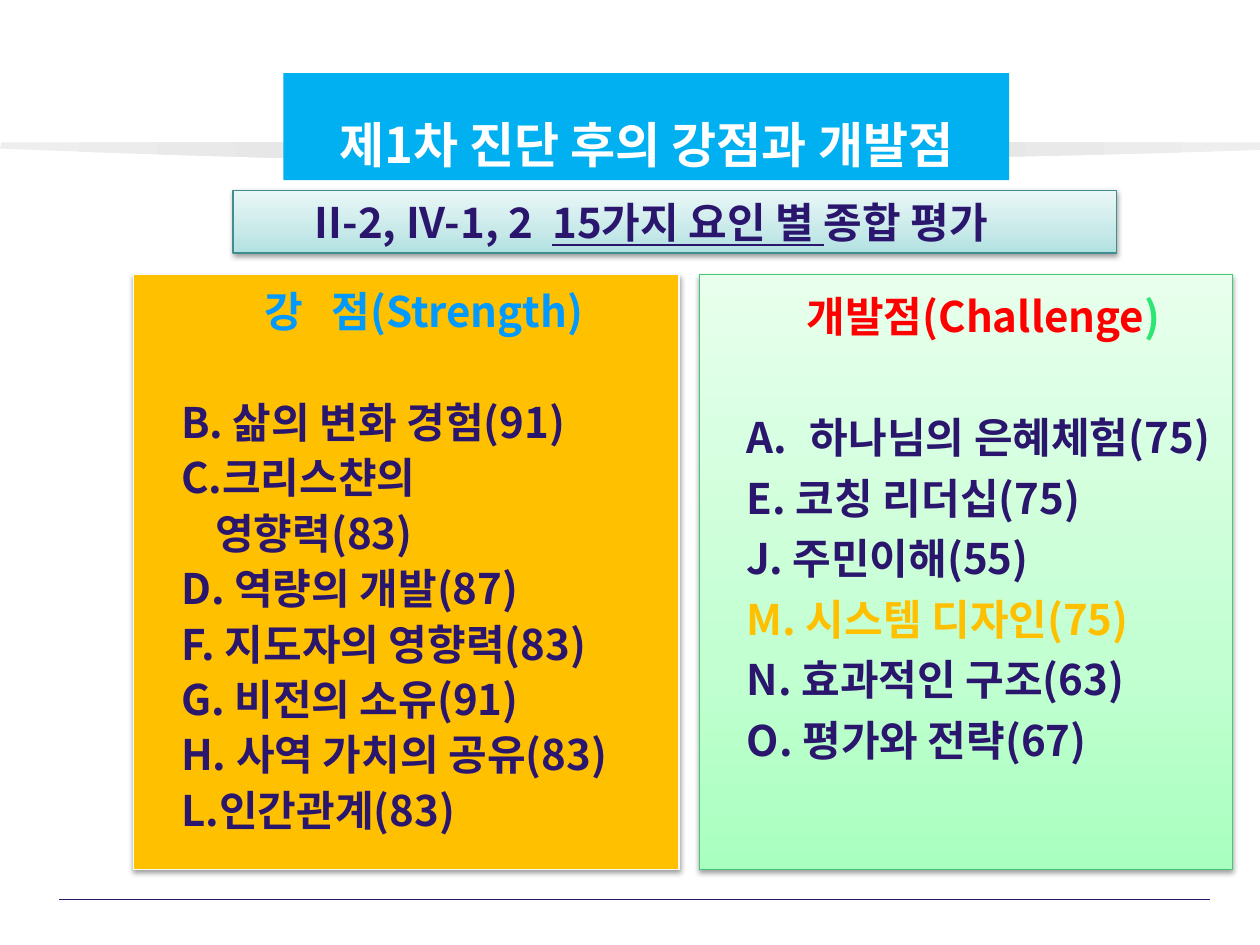
from dataclasses import dataclass
from typing import Optional

from lxml.etree import SubElement
from pptx import Presentation
from pptx.dml.color import RGBColor
from pptx.enum.shapes import MSO_CONNECTOR, MSO_SHAPE
from pptx.enum.text import MSO_ANCHOR, MSO_AUTO_SIZE, PP_ALIGN
from pptx.oxml.ns import qn
from pptx.util import Inches, Pt

FONT = "Noto Sans CJK KR"
NAVY, WHITE, AMBER, GREEN = "2B166E", "FFFFFF", "FFC000", "2DE573"
INDENT = 0.28


@dataclass
class Run:
    text: str
    color: str = NAVY
    size: float = 24
    underline: bool = False
    outline: Optional[tuple[str, float]] = None
    spacing: float = 0


@dataclass
class Para:
    runs: list[Run]
    center: bool = False
    left: float = 0
    hanging: float = 0
    lines: float = 1
    before: float = 0
    numbered: bool = False


@dataclass
class Box:
    left: float
    top: float
    width: float
    height: float
    fill: str | list[tuple[int, str]]
    paras: list[Para]
    line: Optional[str] = None
    grow: bool = False
    wrap: bool = True
    right_inset: float = 0.1


def rgb(value: str) -> RGBColor:
    return RGBColor.from_string(value)


def set_fill(sp, fill: str | list[tuple[int, str]], angle: float = 90) -> None:
    if isinstance(fill, str):
        sp.fill.solid()
        sp.fill.fore_color.rgb = rgb(fill)
        return
    sp.fill.gradient()
    sp.fill.gradient_angle = angle
    stops = sp._element.spPr.find(qn("a:gradFill")).find(qn("a:gsLst"))
    for stop in list(stops):
        stops.remove(stop)
    for position, color in fill:
        stop = SubElement(stops, qn("a:gs"), pos=str(position * 1000))
        SubElement(stop, qn("a:srgbClr"), val=color)


def add_shadow(sp) -> None:
    effects = sp._element.spPr.find(qn("a:effectLst"))
    shadow = SubElement(effects, qn("a:outerShdw"), blurRad=str(Pt(3.1)),
                        dist=str(Pt(1.6)), dir="5400000", rotWithShape="0")
    color = SubElement(shadow, qn("a:srgbClr"), val="000000")
    SubElement(color, qn("a:alpha"), val="38000")


def add_run(p, run: Run) -> None:
    r = p.add_run()
    r.text = run.text
    r.font.size, r.font.bold, r.font.name = Pt(run.size), True, FONT
    r.font.color.rgb = rgb(run.color)
    r.font.underline = run.underline
    props = r.font._element
    SubElement(props, qn("a:ea"), typeface=FONT)
    if run.spacing:
        props.set("spc", str(round(run.spacing * 100)))
    if run.outline:
        color, width = run.outline
        ln = SubElement(props, qn("a:ln"), w=str(Pt(width)))
        SubElement(SubElement(ln, qn("a:solidFill")), qn("a:srgbClr"), val=color)
        props.insert(0, ln)


def add_para(p, para: Para) -> None:
    props = p._p.get_or_add_pPr()
    props.set("marL", str(Inches(para.left)))
    props.set("indent", str(Inches(-para.hanging)))
    if para.numbered:
        SubElement(props, qn("a:buFont"), typeface=FONT)
        SubElement(props, qn("a:buAutoNum"), type="alphaUcPeriod")
    p.alignment = PP_ALIGN.CENTER if para.center else PP_ALIGN.LEFT
    p.line_spacing = para.lines
    p.space_before = Pt(para.before)
    for run in para.runs:
        add_run(p, run)


def add_box(shapes, box: Box) -> None:
    sp = shapes.add_shape(MSO_SHAPE.RECTANGLE, Inches(box.left), Inches(box.top),
                          Inches(box.width), Inches(box.height))
    sp.shadow.inherit = False
    set_fill(sp, box.fill)
    if box.line:
        sp.line.color.rgb = rgb(box.line)
        sp.line.width = Pt(0.75)
        add_shadow(sp)
    else:
        sp.line.fill.background()
    tf = sp.text_frame
    tf.word_wrap = box.wrap
    tf.auto_size = MSO_AUTO_SIZE.SHAPE_TO_FIT_TEXT if box.grow else MSO_AUTO_SIZE.NONE
    tf.vertical_anchor = MSO_ANCHOR.TOP
    tf.margin_right = Inches(box.right_inset)
    for i, para in enumerate(box.paras):
        add_para(tf.add_paragraph() if i else tf.paragraphs[0], para)


def curve(points: list[tuple[float, float]], steps: int = 12) -> list[tuple[float, float]]:
    """Sample a cubic Bezier, leaving out its start point."""
    def at(t: float, axis: int) -> float:
        a, b, c, d = (point[axis] for point in points)
        u = 1 - t
        return u**3 * a + 3 * u * u * t * b + 3 * u * t * t * c + t**3 * d
    return [(at(i / steps, 0), at(i / steps, 1)) for i in range(1, steps + 1)]


def add_backdrop(shapes) -> None:
    knots = [(0, 1.18), (0.53, 1.2), (2.04, 1.26), (3.19, 1.27), (4.34, 1.28),
             (5.76, 1.28), (6.89, 1.26), (8.03, 1.25), (9.49, 1.21), (10.01, 1.19)]
    outline = [knots[0]]
    for i in range(0, len(knots) - 1, 3):
        outline += curve(knots[i:i + 4])
    outline.append((10.01, 1.13))
    builder = shapes.build_freeform(Inches(0.01), Inches(1.13))
    builder.add_line_segments([(Inches(x), Inches(y)) for x, y in outline], close=True)
    band = builder.convert_to_shape()
    band.shadow.inherit = False
    set_fill(band, [(0, "EEEEEE"), (50, "DDDDDD"), (100, "EEEEEE")], angle=0)
    band.line.fill.background()

    rule = shapes.add_connector(MSO_CONNECTOR.STRAIGHT, Inches(0.47), Inches(7.14),
                                Inches(9.6), Inches(7.14))
    rule.line.color.rgb = rgb(NAVY)
    rule.line.width = Pt(0.75)
    SubElement(rule._element.spPr, qn("a:effectLst"))


def column(heading: list[Run], items: list[Para], lines: float, gap: float) -> list[Para]:
    """Centred heading, a gap, then the items, all with one line spacing."""
    items[0].before = gap
    for item in items:
        item.lines = lines
    return [Para(heading, center=True, left=INDENT, lines=lines), *items]


def item(text: str, color: str = NAVY, left: float = INDENT) -> Para:
    return Para([Run(text, color)], left=left)


def main() -> None:
    prs = Presentation()
    prs.slide_width, prs.slide_height = Inches(10), Inches(7.5)
    s = prs.slides.add_slide(prs.slide_layouts[6])
    add_backdrop(s.shapes)

    title = [Para([Run("제1차 진단 후의 강점과 개발점", WHITE, 28)], center=True, lines=1.6)]
    subtitle = [Para([Run("II-2, IV-1, 2"), Run(" ", spacing=5.4),
                      Run("15가지 요인 별 ", underline=True), Run("종합 평가")], center=True)]
    blue, edge = "0099FF", ("1766B5", 1)
    strengths = column(
        [Run("강", blue, outline=edge), Run(" ", blue, spacing=10.8),
         Run("점(Strength)", blue, outline=edge)],
        [item("B. 삶의 변화 경험(91)"), item("C.크리스챤의"),
         item("영향력(83)", left=0.55), item("D. 역량의 개발(87)"),
         item("F. 지도자의 영향력(83)"), item("G. 비전의 소유(91)"),
         item("H. 사역 가치의 공유(83)"), item("L.인간관계(83)")],
        lines=1.1, gap=31.5)
    challenges = column(
        [Run("개발점(Challenge", "FF0000", outline=(GREEN, 1.42)),
         Run(")", GREEN, outline=(GREEN, 1.42))],
        [Para([Run("하나님의 은혜체험(75)")], left=0.78, hanging=0.5, numbered=True),
         item("E. 코칭 리더십(75)"), item("J. 주민이해(55)"),
         item("M. 시스템 디자인(75)", AMBER), item("N. 효과적인 구조(63)"),
         item("O. 평가와 전략(67)")],
        lines=1.2, gap=34.5)

    teal = [(0, "B0E1E1"), (35, "C8E9E9"), (100, "EAF7F7")]
    mint = [(0, "A9FFBF"), (35, "C2FFD1"), (100, "E8FFED")]
    for box in (
        Box(2.25, 0.58, 5.76, 0.85, "00B0F0", title, grow=True, wrap=False),
        Box(1.85, 1.51, 7.01, 0.5, teal, subtitle, "428E8E", grow=True, right_inset=0.47),
        Box(1.06, 2.18, 4.33, 4.72, AMBER, strengths, "F9F9F9"),
        Box(5.55, 2.18, 4.23, 4.72, mint, challenges, "42CA76"),
    ):
        add_box(s.shapes, box)
    prs.save("out.pptx")


if __name__ == "__main__":
    main()
